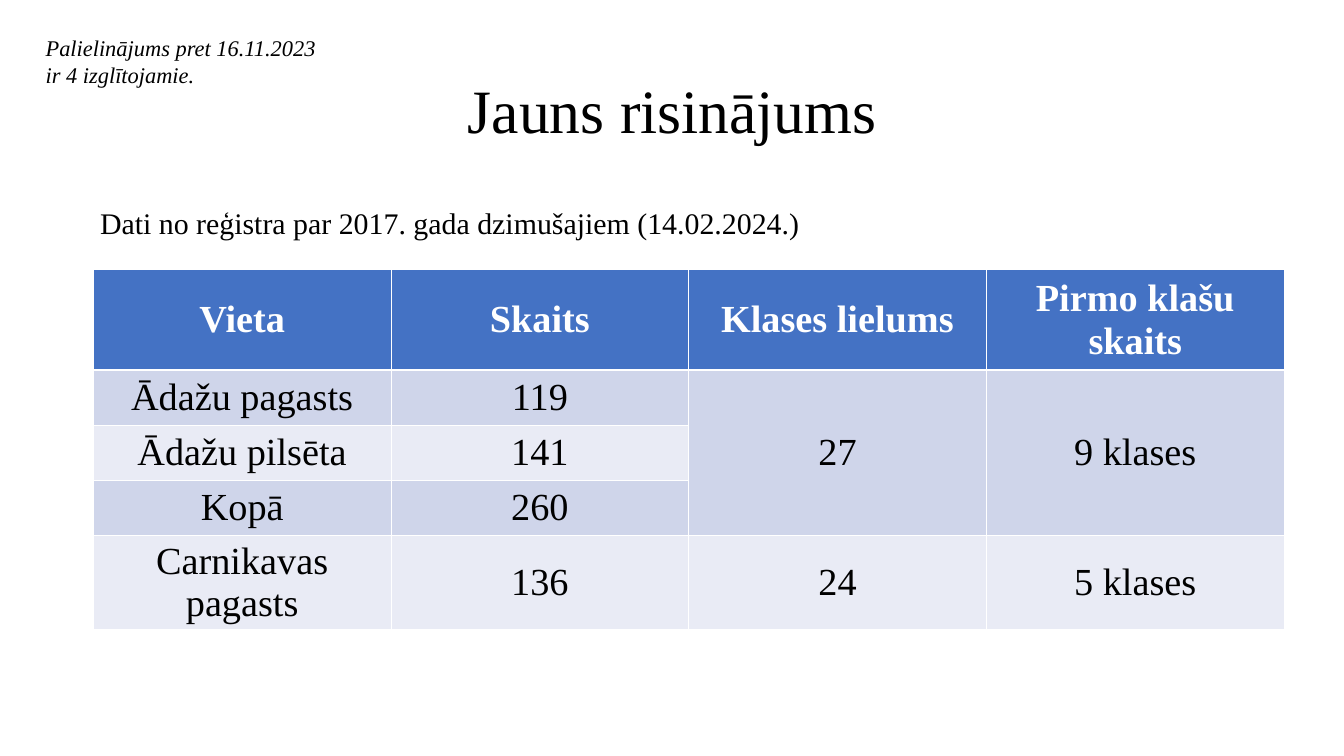
from dataclasses import dataclass

from lxml import etree
from pptx import Presentation
from pptx import util as u
from pptx.dml.color import RGBColor
from pptx.enum import text
from pptx.oxml import ns


@dataclass(frozen=True)
class Theme:
    font: str = "Times New Roman"
    ink: str = "000000"
    paper: str = "FFFFFF"
    header: str = "4472C4"
    bands: tuple = ("E9EBF5", "CFD5EA")
    title: int = 66
    table: int = 41
    lead: int = 32
    note: int = 24


T = Theme()
ROWS = [
    ("Vieta", "Skaits", "Klases lielums", "Pirmo klašu skaits"),
    ("Ādažu pagasts", "119", "27", "9 klases"),
    ("Ādažu pilsēta", "141", "", ""),
    ("Kopā", "260", "", ""),
    ("Carnikavas pagasts", "136", "24", "5 klases"),
]
ROW_HEIGHTS = (1.5, 0.82, 0.82, 0.82, 1.4)
COL_WIDTH = 4.43


def apply(obj, values):
    for name, value in values.items():
        setattr(obj, name, value)


def box(left, top, width, height):
    return [u.Inches(v) for v in (left, top, width, height)]


def write(tf, words, size, color=T.ink, para=None, **font):
    p = tf.paragraphs[0]
    apply(p, para or {})
    r = p.add_run()
    r.text = words
    apply(r.font, {"name": T.font, "size": u.Pt(size), **font})
    r.font.color.rgb = RGBColor.from_string(color)


def add_title(slide, words):
    sp = slide.shapes.title
    apply(sp, dict(zip(("left", "top", "width", "height"), box(1.38, 0.6, 17.25, 2.17))))
    tf = sp.text_frame
    apply(tf, {"vertical_anchor": text.MSO_ANCHOR.MIDDLE, "word_wrap": True,
               "auto_size": text.MSO_AUTO_SIZE.NONE})
    write(tf, words, T.title, para={"alignment": text.PP_ALIGN.CENTER, "line_spacing": 0.9})


def add_text(slide, place, words, size, **font):
    tf = slide.shapes.add_textbox(*box(*place)).text_frame
    apply(tf, {"word_wrap": True, "auto_size": text.MSO_AUTO_SIZE.SHAPE_TO_FIT_TEXT})
    write(tf, words, size, **font)


def add_borders(cell, widths):
    tc_pr = cell._tc.get_or_add_tcPr()
    for side, width in widths.items():
        ln = etree.SubElement(tc_pr, ns.qn(f"a:ln{side}"), w=str(u.Pt(width)))
        fill = etree.SubElement(ln, ns.qn("a:solidFill"))
        etree.SubElement(fill, ns.qn("a:srgbClr"), val=T.paper)


def format_cell(cell, words, row):
    head = row == 0
    apply(cell, {"vertical_anchor": text.MSO_ANCHOR.MIDDLE,
                 "margin_left": u.Inches(0.15), "margin_right": u.Inches(0.15),
                 "margin_top": u.Inches(0.07), "margin_bottom": u.Inches(0.07)})
    add_borders(cell, {"L": 1, "R": 1, "T": 3 if row == 1 else 1, "B": 3 if head else 1})
    cell.fill.solid()
    cell.fill.fore_color.rgb = RGBColor.from_string(T.header if head else T.bands[row % 2])
    if words:
        write(cell.text_frame, words, T.table, T.paper if head else T.ink,
              {"alignment": text.PP_ALIGN.CENTER}, bold=head)


def add_class_table(slide):
    cols = len(ROWS[0])
    place = box(1.39, 4.01, COL_WIDTH * cols, sum(ROW_HEIGHTS))
    table = slide.shapes.add_table(len(ROWS), cols, *place).table
    for col in table.columns:
        col.width = u.Inches(COL_WIDTH)
    for i, (values, height) in enumerate(zip(ROWS, ROW_HEIGHTS)):
        table.rows[i].height = u.Inches(height)
        for j, words in enumerate(values):
            format_cell(table.cell(i, j), words, i)
    for j in (2, 3):
        table.cell(1, j).merge(table.cell(3, j))


def main():
    prs = Presentation()
    apply(prs, {"slide_width": u.Inches(20), "slide_height": u.Inches(11.25)})
    slide = prs.slides.add_slide(prs.slide_layouts[5])
    add_title(slide, "Jauns risinājums")
    add_class_table(slide)
    add_text(slide, (1.39, 2.99, 12.61, 0.64),
             "Dati no reģistra par 2017. gada dzimušajiem (14.02.2024.)", T.lead)
    add_text(slide, (0.58, 0.46, 4.42, 0.91),
             "Palielinājums pret 16.11.2023 ir 4 izglītojamie.", T.note, italic=True)
    prs.save("out.pptx")


if __name__ == "__main__":
    main()
